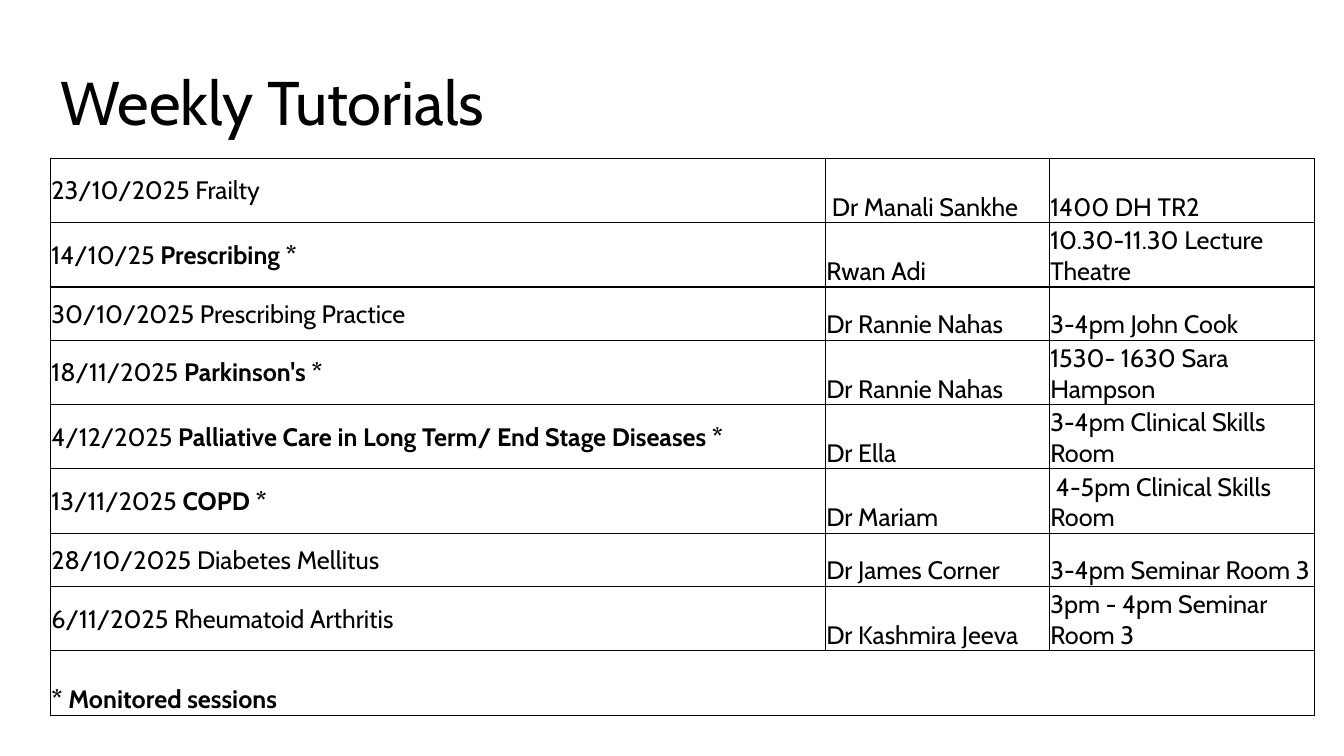
from dataclasses import dataclass

from lxml.etree import SubElement
from pptx import Presentation
from pptx.dml.color import RGBColor
from pptx.enum.text import MSO_ANCHOR, MSO_AUTO_SIZE, PP_ALIGN
from pptx.oxml.ns import qn
from pptx.slide import Slide
from pptx.table import _Cell as Cell
from pptx.text.text import TextFrame
from pptx.util import Pt

FONT = "Cabin"
BLACK, WHITE = "000000", "FFFFFF"
COLUMN_WIDTHS = (553.5, 160, 189.5)
TALL_ROW, SHORT_ROW = 46, 38


@dataclass(frozen=True)
class Tutorial:
    date: str
    topic: str
    speaker: str
    venue: str
    monitored: bool = False
    height: float = TALL_ROW


TUTORIALS = [
    Tutorial("23/10/2025 ", "Frailty", " Dr Manali Sankhe", "1400 DH TR2"),
    Tutorial("14/10/25 ", "Prescribing *", "Rwan Adi", "10.30-11.30 Lecture Theatre", monitored=True),
    Tutorial("30/10/2025 ", "Prescribing Practice", "Dr Rannie Nahas", "3-4pm John Cook", height=SHORT_ROW),
    Tutorial("18/11/2025 ", "Parkinson's *", "Dr Rannie Nahas", "1530- 1630 Sara Hampson", monitored=True),
    Tutorial("4/12/2025 ", "Palliative Care in Long Term/ End Stage Diseases *", "Dr Ella",
             "3-4pm Clinical Skills Room", monitored=True),
    Tutorial("13/11/2025 ", "COPD *", "Dr Mariam", " 4-5pm Clinical Skills Room", monitored=True),
    Tutorial("28/10/2025 ", "Diabetes Mellitus", "Dr James Corner", "3-4pm Seminar Room 3", height=SHORT_ROW),
    Tutorial("6/11/2025 ", "Rheumatoid Arthritis", "Dr Kashmira Jeeva", "3pm - 4pm Seminar Room 3"),
]


def color(value: str) -> RGBColor:
    return RGBColor.from_string(value)


def add_text(frame: TextFrame, text: str, *, size: float = 18, bold: bool = False) -> None:
    """Append a formatted run to the frame's first paragraph."""
    run = frame.paragraphs[0].add_run()
    run.text = text
    run.font.name = FONT
    run.font.size = Pt(size)
    run.font.bold = bold
    run.font.color.rgb = color(BLACK)


def format_cell(cell: Cell, anchor: MSO_ANCHOR) -> None:
    """Set anchor, margins, black borders and white fill."""
    cell.vertical_anchor = anchor
    cell.margin_left = cell.margin_right = cell.margin_top = Pt(0.75)
    cell.margin_bottom = 0
    properties = cell._tc.get_or_add_tcPr()
    for side in ("lnL", "lnR", "lnT", "lnB"):
        border = SubElement(properties, qn(f"a:{side}"), w=str(Pt(1)))
        SubElement(SubElement(border, qn("a:solidFill")), qn("a:srgbClr"), val=BLACK)
    cell.fill.solid()
    cell.fill.fore_color.rgb = color(WHITE)


def add_title(slide: Slide) -> None:
    title = slide.shapes.title
    title.left, title.top, title.width, title.height = Pt(36), Pt(23), Pt(828), Pt(104.5)
    frame = title.text_frame
    frame.auto_size = MSO_AUTO_SIZE.NONE
    frame.vertical_anchor = MSO_ANCHOR.MIDDLE
    heading = frame.paragraphs[0]
    heading.alignment = PP_ALIGN.LEFT
    heading.line_spacing = 0.9
    add_text(frame, "Weekly Tutorials", size=44)


def add_timetable(slide: Slide) -> None:
    heights = [tutorial.height for tutorial in TUTORIALS] + [TALL_ROW]
    timetable = slide.shapes.add_table(
        len(heights), len(COLUMN_WIDTHS), Pt(36), Pt(113), Pt(sum(COLUMN_WIDTHS)), Pt(sum(heights))
    ).table
    timetable.first_row = timetable.horz_banding = False
    for column, width in zip(timetable.columns, COLUMN_WIDTHS):
        column.width = Pt(width)
    for row, height in zip(timetable.rows, heights):
        row.height = Pt(height)

    for row, tutorial in zip(timetable.rows, TUTORIALS):
        session, speaker, venue = row.cells
        format_cell(session, MSO_ANCHOR.MIDDLE)
        add_text(session.text_frame, tutorial.date)
        add_text(session.text_frame, tutorial.topic, bold=tutorial.monitored)
        for cell, text in ((speaker, tutorial.speaker), (venue, tutorial.venue)):
            format_cell(cell, MSO_ANCHOR.BOTTOM)
            add_text(cell.text_frame, text)

    footnote, *_, last = timetable.rows[len(TUTORIALS)].cells
    footnote.merge(last)
    for cell in timetable.rows[len(TUTORIALS)].cells:
        format_cell(cell, MSO_ANCHOR.BOTTOM)
    add_text(footnote.text_frame, "* Monitored sessions", bold=True)


def main() -> None:
    deck = Presentation()
    deck.slide_width, deck.slide_height = Pt(960), Pt(540)
    slide = deck.slides.add_slide(deck.slide_layouts.get_by_name("Title Only"))
    add_title(slide)
    add_timetable(slide)
    deck.save("out.pptx")


if __name__ == "__main__":
    main()
